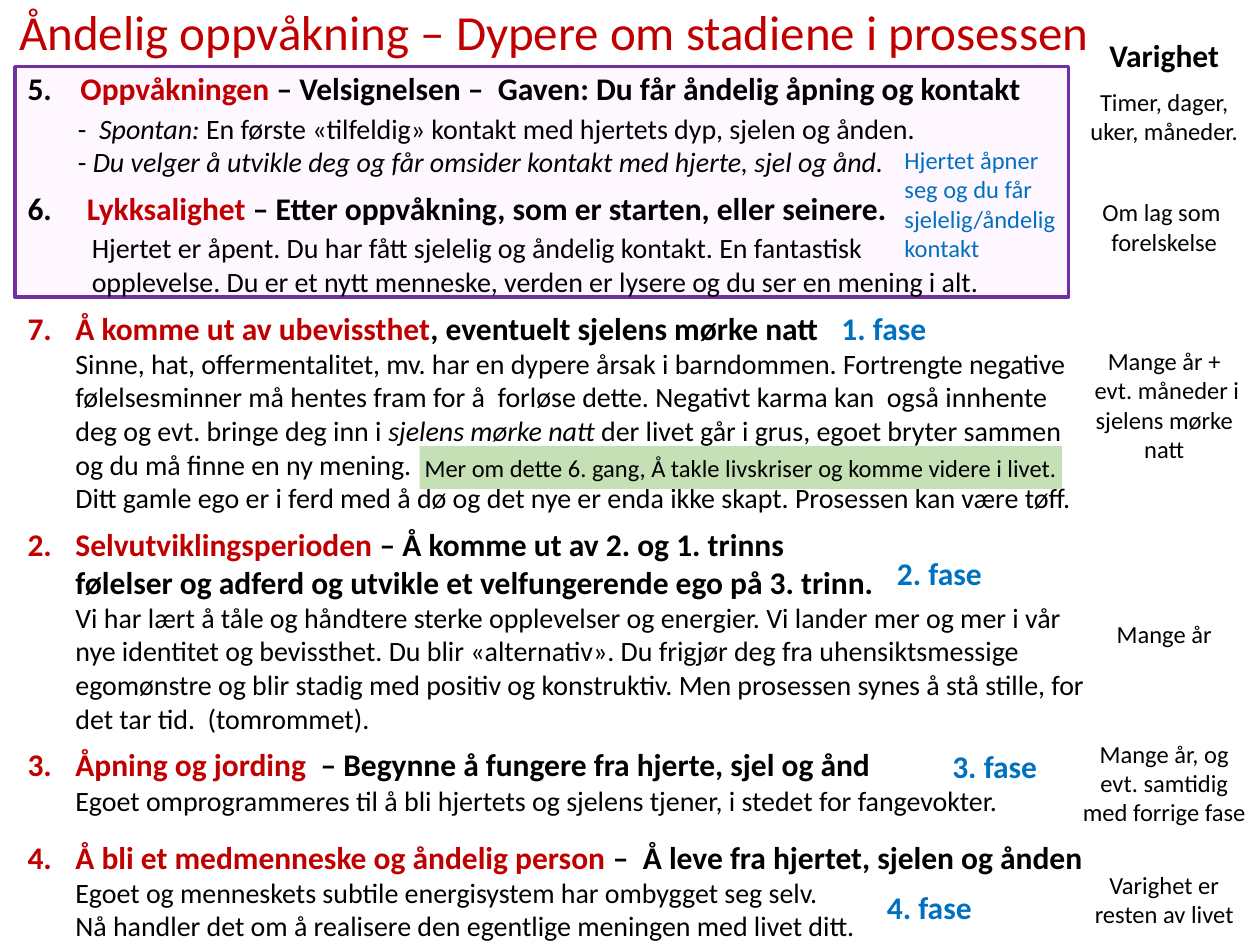
from copy import deepcopy
from dataclasses import dataclass

from lxml.etree import SubElement
from pptx import Presentation
from pptx.dml.color import RGBColor
from pptx.enum.shapes import MSO_SHAPE
from pptx.enum.text import MSO_ANCHOR, MSO_AUTO_SIZE, PP_ALIGN
from pptx.oxml.ns import qn
from pptx.util import Emu, Pt

PX = 9144  # EMU; 100 px to the inch

BLACK = RGBColor(0, 0, 0)
RED = RGBColor(0xC0, 0, 0)
BLUE = RGBColor(0, 0x70, 0xC0)
PURPLE = RGBColor(0x70, 0x30, 0xA0)
PINK = RGBColor(0xFF, 0xF7, 0xFF)
GREEN = RGBColor(0xC5, 0xE0, 0xB4)

FORMATS = {
    "head": dict(size=Pt(18), bold=True),
    "body": dict(size=Pt(16)),
    "italic": dict(size=Pt(16), italic=True),
    "small": dict(size=Pt(14)),
    "title": dict(size=Pt(28)),
}


@dataclass(frozen=True)
class Span:
    text: str
    style: str = "body"
    color: RGBColor = BLACK


@dataclass(frozen=True)
class Para:
    spans: tuple[Span, ...]
    before: float = 0
    after: float = 0
    left: int = 0
    number: int = 0
    number_color: RGBColor = RED
    align: PP_ALIGN = PP_ALIGN.LEFT


@dataclass(frozen=True)
class Place:
    left: int
    top: int
    width: int
    height: int

    def emu(self) -> list[Emu]:
        return [Emu(v * PX) for v in (self.left, self.top, self.width, self.height)]


def add_span(para, span: Span) -> None:
    """Add the text, with a line break of the same format at each newline."""
    for index, line in enumerate(span.text.split("\n")):
        if index:
            line_break = para._p.add_br()
            line_break.append(deepcopy(run._r.rPr))
        run = para.add_run()
        run.text = line
        run.font.name = "Calibri"
        run.font.color.rgb = span.color
        for name, value in FORMATS[span.style].items():
            setattr(run.font, name, value)


def set_indent(para, item: Para) -> None:
    """Set the left margin, and hang an automatic number in it if there is one."""
    props = para._p.get_or_add_pPr()
    props.set("marL", str(item.left * PX))
    props.set("indent", str(-item.left * PX if item.number else 0))
    if item.number:
        color = SubElement(SubElement(props, qn("a:buClr")), qn("a:srgbClr"))
        color.set("val", str(item.number_color))
        SubElement(props, qn("a:buFont")).set("typeface", "+mj-lt")
        number = SubElement(props, qn("a:buAutoNum"))
        number.set("type", "arabicPeriod")
        number.set("startAt", str(item.number))


def fill_text(frame, items: list[Para]) -> None:
    frame.word_wrap = True
    frame.auto_size = MSO_AUTO_SIZE.SHAPE_TO_FIT_TEXT
    for index, item in enumerate(items):
        para = frame.add_paragraph() if index else frame.paragraphs[0]
        formats = dict(alignment=item.align, space_before=Pt(item.before),
                       space_after=Pt(item.after))
        for name, value in formats.items():
            setattr(para, name, value)
        set_indent(para, item)
        for span in item.spans:
            add_span(para, span)


def add_text(page, place: Place, items: list[Para]) -> None:
    fill_text(page.shapes.add_textbox(*place.emu()).text_frame, items)


def add_panel(page, place: Place, fill: RGBColor):
    panel = page.shapes.add_shape(MSO_SHAPE.RECTANGLE, *place.emu())
    panel.shadow.inherit = False
    panel.fill.solid()
    panel.fill.fore_color.rgb = fill
    panel.line.fill.background()
    return panel


def stage(number: int, name: str, rest: str, *body: Span, before: int = 6) -> Para:
    spans = (Span(name, "head", RED), Span(rest + "\n", "head"), *body)
    return Para(spans, before=before, left=38, number=number)


def awakening(number: int, left: int, name: str, rest: str) -> Para:
    return Para((Span(name, "head", RED), Span(rest, "head")), before=6, left=left,
                number=number, number_color=BLACK)


STAGES = [
    awakening(5, 42, "Oppvåkningen ",
              "– Velsignelsen –  Gaven: Du får åndelig åpning og kontakt"),
    Para((Span("-  "), Span("Spontan: ", "italic"),
          Span("En første «tilfeldig» kontakt med hjertets dyp, sjelen og ånden.")),
         before=2.4, left=40),
    Para((Span("- "), Span("Du velger å utvikle deg og får omsider kontakt med hjerte, "
                           "sjel og ånd.", "italic")), left=40),
    awakening(6, 47, "Lykksalighet ", "– Etter oppvåkning, som er starten, eller seinere."),
    Para((Span("Hjertet er åpent. Du har fått sjelelig og åndelig kontakt. En fantastisk \n"
               "opplevelse. Du er et nytt menneske, verden er lysere og du ser en mening "
               "i alt."),), before=2.4, left=51),
    stage(1, "Å komme ut av ubevissthet", ", eventuelt sjelens mørke natt",
          Span("Sinne, hat, offermentalitet, mv. har en dypere årsak i barndommen. "
               "Fortrengte negative følelsesminner må hentes fram for å  forløse dette. "
               "Negativt karma kan  også innhente deg og evt. bringe deg inn i "),
          Span("sjelens mørke natt", "italic"),
          Span(" der livet går i grus, egoet bryter sammen og du må finne en ny mening. \n"
               "Ditt gamle ego er i ferd med å dø og det nye er enda ikke skapt. "
               "Prosessen kan være tøff.")),
    stage(2, "Selvutviklingsperioden ", "– Å komme ut av 2. og 1. trinns \n"
          "følelser og adferd og utvikle et velfungerende ego på 3. trinn.",
          Span("Vi har lært å tåle og håndtere sterke opplevelser og energier. Vi lander "
               "mer og mer i vår nye identitet og bevissthet. Du blir «alternativ». Du "
               "frigjør deg fra uhensiktsmessige egomønstre og blir stadig med positiv og "
               "konstruktiv. Men prosessen synes å stå stille, for det tar tid.  "
               "(tomrommet).")),
    stage(3, "Åpning og jording  ", "– Begynne å fungere fra hjerte, sjel og ånd",
          Span("Egoet omprogrammeres til å bli hjertets og sjelens tjener, i stedet for "
               "fangevokter.")),
    stage(4, "Å bli et medmenneske og åndelig person ",
          "–  Å leve fra hjertet, sjelen og ånden",
          Span("Egoet og menneskets subtile energisystem har ombygget seg selv. \n"
               "Nå handler det om å realisere den egentlige meningen med livet ditt."),
          before=12),
]

# Text and the space above it in points
DURATIONS = [
    ("Timer, dager, uker, måneder.", 7.3),
    ("Om lag som  forelskelse", 29.3),
    ("Mange år +\n evt. måneder i sjelens mørke natt", 51.3),
    ("Mange år", 89.1),
    ("Mange år, og evt. samtidig med forrige fase", 51.3),
    ("Varighet er resten av livet", 24.4),
]

PHASES = [Place(658, 240, 140, 40), Place(702, 435, 140, 40),
          Place(746, 588, 97, 40), Place(694, 700, 108, 40)]


def main() -> None:
    deck = Presentation()
    deck.slide_width, deck.slide_height = Emu(1000 * PX), Emu(750 * PX)
    page = deck.slides.add_slide(deck.slide_layouts[6])

    frame = add_panel(page, Place(12, 53, 836, 183), PINK)
    frame.line.color.rgb = PURPLE
    frame.line.width = Pt(2)

    title = Span("Åndelig oppvåkning – Dypere om stadiene i prosessen", "title", RED)
    add_text(page, Place(2, -4, 875, 57), [Para((title,), after=6, align=PP_ALIGN.CENTER)])
    add_text(page, Place(12, 50, 865, 710), STAGES)

    durations = [Para((Span("Varighet", "head"),), align=PP_ALIGN.CENTER)]
    durations += [Para((Span(text, "small"),), before=gap, align=PP_ALIGN.CENTER)
                  for text, gap in DURATIONS]
    add_text(page, Place(848, 24, 152, 739), durations)

    for number, place in enumerate(PHASES, 1):
        add_text(page, place, [Para((Span(f"{number}. fase", "head", BLUE),))])
    heart = Span("Hjertet åpner seg og du får sjelelig/åndelig kontakt", "small", BLUE)
    add_text(page, Place(708, 110, 140, 104), [Para((heart,))])

    note = add_panel(page, Place(333, 354, 510, 34), GREEN).text_frame
    note.margin_left = note.margin_right = Emu(2 * PX)
    note.vertical_anchor = MSO_ANCHOR.MIDDLE
    more = Span("Mer om dette 6. gang, Å takle livskriser og komme videre i livet. ", "small")
    fill_text(note, [Para((more,), align=PP_ALIGN.CENTER)])

    deck.save("out.pptx")


if __name__ == "__main__":
    main()
